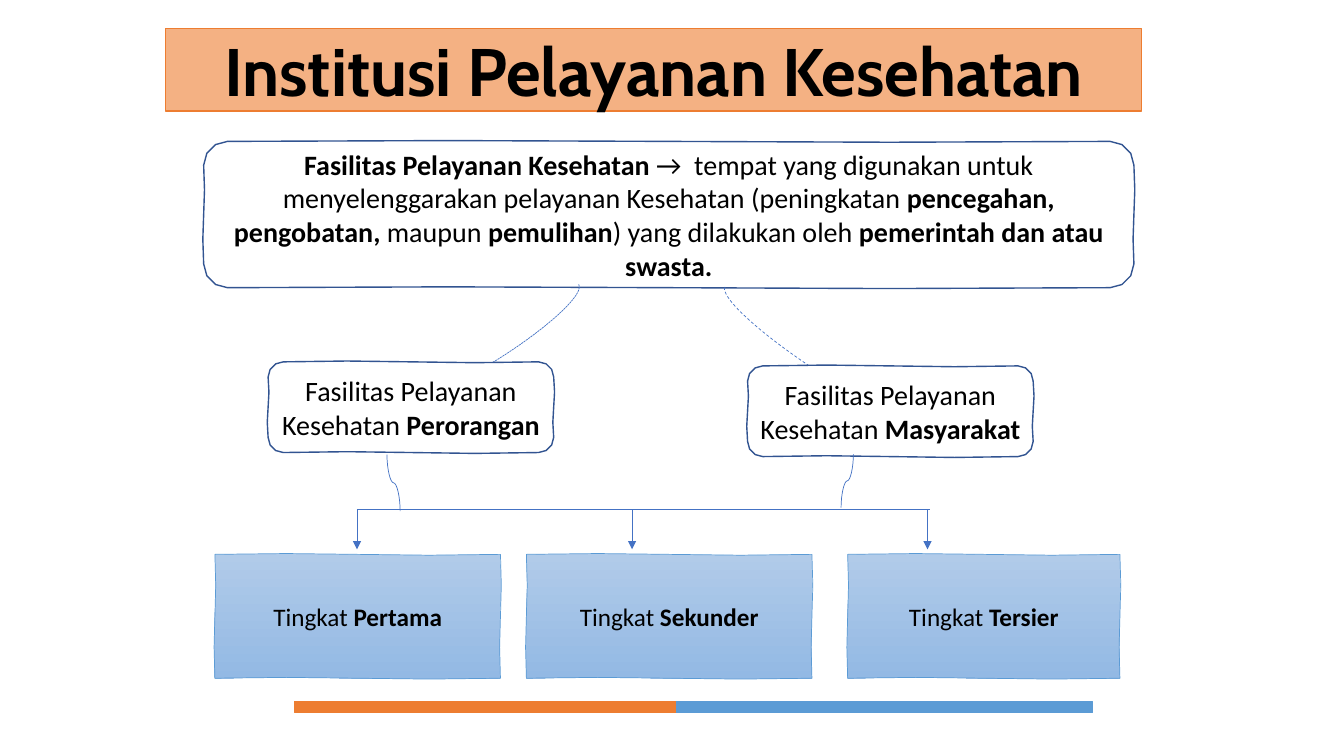
"""Builds the slide on health care institutions and their service levels."""
import math

import pptx
import pptx.dml.color
import pptx.enum.dml
import pptx.enum.shapes
import pptx.enum.text
import pptx.util
from lxml import etree

Pt = pptx.util.Pt
RGB = pptx.dml.color.RGBColor.from_string
SHAPE = pptx.enum.shapes.MSO_SHAPE
CONNECTOR = pptx.enum.shapes.MSO_CONNECTOR
DASH = pptx.enum.dml.MSO_LINE
A = "{http://schemas.openxmlformats.org/drawingml/2006/main}"
COLORS = {
    "text": "000000", "paper": "FFFFFF", "outline": "325491", "link": "4472C4",
    "orange": "ED7D31", "peach": "F4B183", "blue": "5B9BD5",
    "level_top": "B1CBE9", "level_bottom": "93B9E4",
}

deck = pptx.Presentation()
deck.slide_width, deck.slide_height = Pt(960), Pt(540)
shapes = deck.slides.add_slide(deck.slide_layouts[6]).shapes


def sketch_box(left, top, width, height, corner, line_color, line_width):
    """Draw a rectangle with gently rippled sides and corners of the given radius."""
    right, bottom = left + width, top + height
    centers = [(left + corner, top + corner), (right - corner, top + corner),
               (right - corner, bottom - corner), (left + corner, bottom - corner)]
    outline = []
    for side, (x, y) in enumerate(centers):
        for turn in (0, 30, 60, 90) if corner else (0,):
            angle = math.radians(180 + 90 * side + turn)
            outline.append((x + corner * math.cos(angle), y + corner * math.sin(angle)))
        dx, dy = [(1, 0), (0, 1), (-1, 0), (0, -1)][side]
        length = (width if dx else height) - 2 * corner
        for part, ripple in [(0.25, 0.6), (0.5, 0), (0.75, -0.6)]:
            along, out = length * part, corner + ripple
            outline.append((x + along * dx + out * dy, y + along * dy - out * dx))
    points = [(Pt(x), Pt(y)) for x, y in outline]
    builder = shapes.build_freeform(*points[0])
    builder.add_line_segments(points[1:], close=True)
    box = builder.convert_to_shape()
    box.shadow.inherit = False
    box.line.color.rgb = RGB(COLORS[line_color])
    box.line.width = Pt(line_width)
    return box


def write(shape, parts, size, font="Calibri"):
    """Fill a shape with centred runs given as (words, bold) pairs."""
    frame = shape.text_frame
    frame.word_wrap = True
    frame.vertical_anchor = pptx.enum.text.MSO_ANCHOR.MIDDLE
    paragraph = frame.paragraphs[0]
    paragraph.alignment = pptx.enum.text.PP_ALIGN.CENTER
    for words, bold in parts:
        run = paragraph.add_run()
        run.text = words
        run.font.name, run.font.size, run.font.bold = font, Pt(size), bold
        run.font.color.rgb = RGB(COLORS["text"])


definition = sketch_box(145.5, 101, 664.5, 104.5, 17, "outline", 1)
definition.fill.solid()
definition.fill.fore_color.rgb = RGB(COLORS["paper"])
write(definition, [
    ("Fasilitas Pelayanan Kesehatan ", True),
    ("→  tempat yang digunakan untuk menyelenggarakan pelayanan Kesehatan (peningkatan ", False),
    ("pencegahan, pengobatan, ", True),
    ("maupun ", False),
    ("pemulihan", True),
    (") yang dilakukan oleh ", False),
    ("pemerintah dan atau swasta.", True),
], 20)

for left, top, width, height, rotation, dash, end_angle in [
    (336.2, 168.5, 28.1, 149.8, 57.5, DASH.SQUARE_DOT, 18.06),
    (502.6, 241.2, 198, 32.4, 212.3, DASH.DASH, 0),
]:
    branch = shapes.add_shape(SHAPE.ARC, Pt(left), Pt(top), Pt(width), Pt(height))
    branch.adjustments[0], branch.adjustments[1] = 162, end_angle
    branch.rotation = rotation
    branch.shadow.inherit = False
    branch.fill.background()
    branch.line.color.rgb = RGB(COLORS["link"])
    branch.line.width = Pt(0.5)
    branch.line.dash_style = dash

for left, width, level_name in [(153.5, 204, "Pertama"), (376, 204, "Sekunder"),
                                (605.5, 194.5, "Tersier")]:
    level = sketch_box(left, 396, width, 88.5, 0, "blue", 0.5)
    level.fill.gradient()
    level.fill.gradient_angle = 270
    for stop, shade in zip(level.fill.gradient_stops, ("level_top", "level_bottom")):
        stop.color.rgb = RGB(COLORS[shade])
    write(level, [("Tingkat ", False), (level_name, True)], 18)

for left, top, audience in [(191.5, 258.5, "Perorangan"), (534, 261.4, "Masyarakat")]:
    facility = sketch_box(left, top, 204, 64.8, 10.8, "outline", 1)
    facility.fill.solid()
    facility.fill.fore_color.rgb = RGB(COLORS["paper"])
    write(facility, [("Fasilitas Pelayanan Kesehatan ", False), (audience, True)], 20)

RAIL, ARROW_END = 363.6, 392.4
for kind, x1, y1, x2, y2, turn, arrow in [
    (CONNECTOR.STRAIGHT, 255, RAIL, 664, RAIL, 0, False),
    (CONNECTOR.STRAIGHT, 255, RAIL, 255, ARROW_END, 0, True),
    (CONNECTOR.STRAIGHT, 451.5, RAIL, 451.5, ARROW_END, 0, True),
    (CONNECTOR.STRAIGHT, 662.5, RAIL, 662.5, ARROW_END, 0, True),
    (CONNECTOR.CURVE, 301.3, 340.2, 261, 349.6, 270, False),
    (CONNECTOR.CURVE, 586.1, 339.1, 624.2, 347.9, 90, False),
]:
    link = shapes.add_connector(kind, Pt(x1), Pt(y1), Pt(x2), Pt(y2))
    link.line.color.rgb = RGB(COLORS["link"])
    link.line.width = Pt(0.5)
    properties = link.element.spPr
    if turn:
        properties.xfrm.set("rot", str(turn * 60000))
    if arrow:
        etree.SubElement(properties.find(A + "ln"), A + "tailEnd", type="triangle")
    etree.SubElement(properties, A + "effectLst")

panels = []
for left, top, width, height, fill, edge in [
    (210.5, 501.1, 297.4, 7.9, "orange", "orange"),
    (483.1, 501.1, 297.4, 7.9, "blue", "blue"),
    (118.4, 20.2, 697, 59, "peach", "orange"),
]:
    panel = shapes.add_shape(SHAPE.RECTANGLE, Pt(left), Pt(top), Pt(width), Pt(height))
    panel.shadow.inherit = False
    panel.fill.solid()
    panel.fill.fore_color.rgb = RGB(COLORS[fill])
    panel.line.color.rgb = RGB(COLORS[edge])
    panel.line.width = Pt(1)
    panels.append(panel)
write(panels[-1], [("Institusi Pelayanan Kesehatan", True)], 48, "Cabin")

deck.save("out.pptx")
